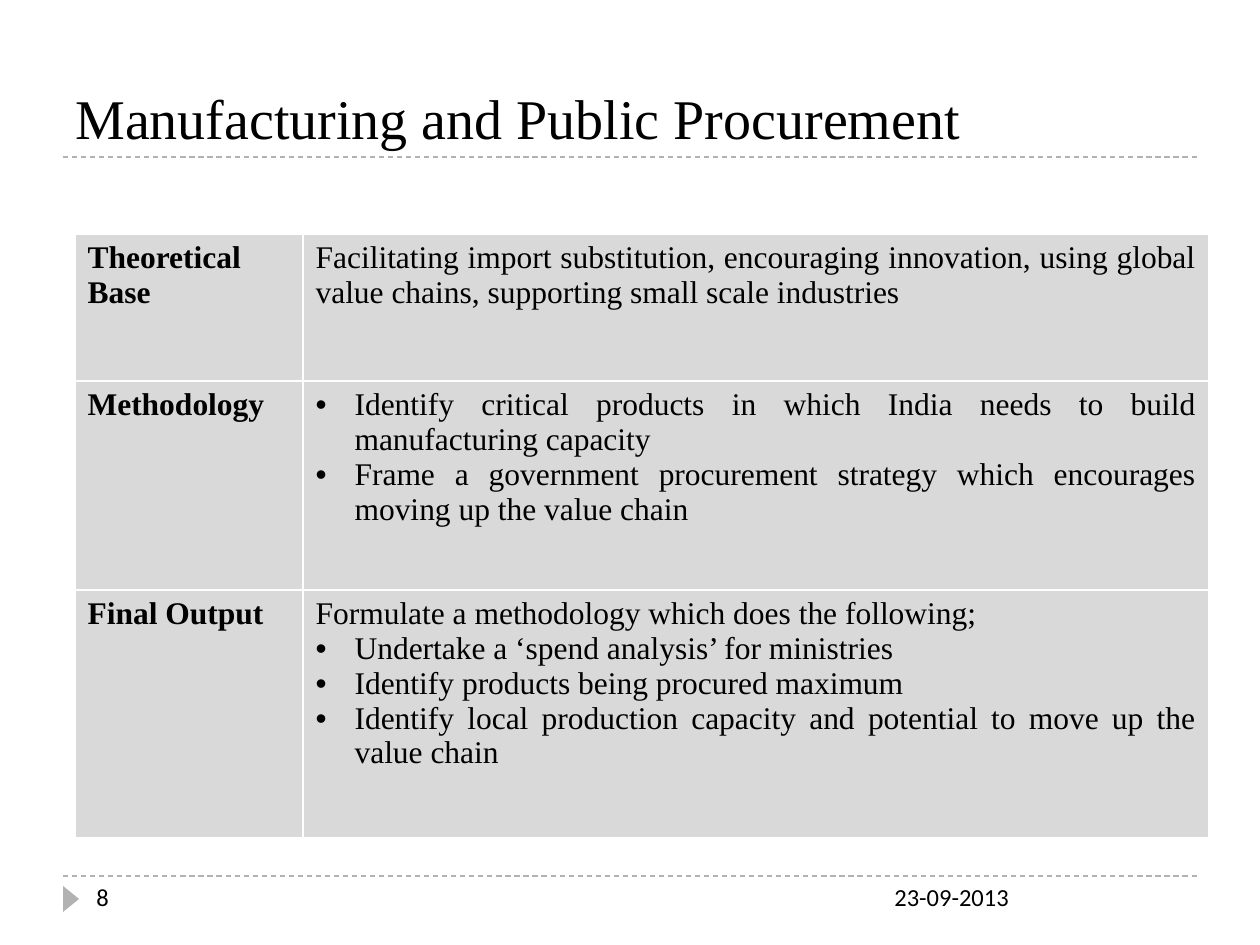
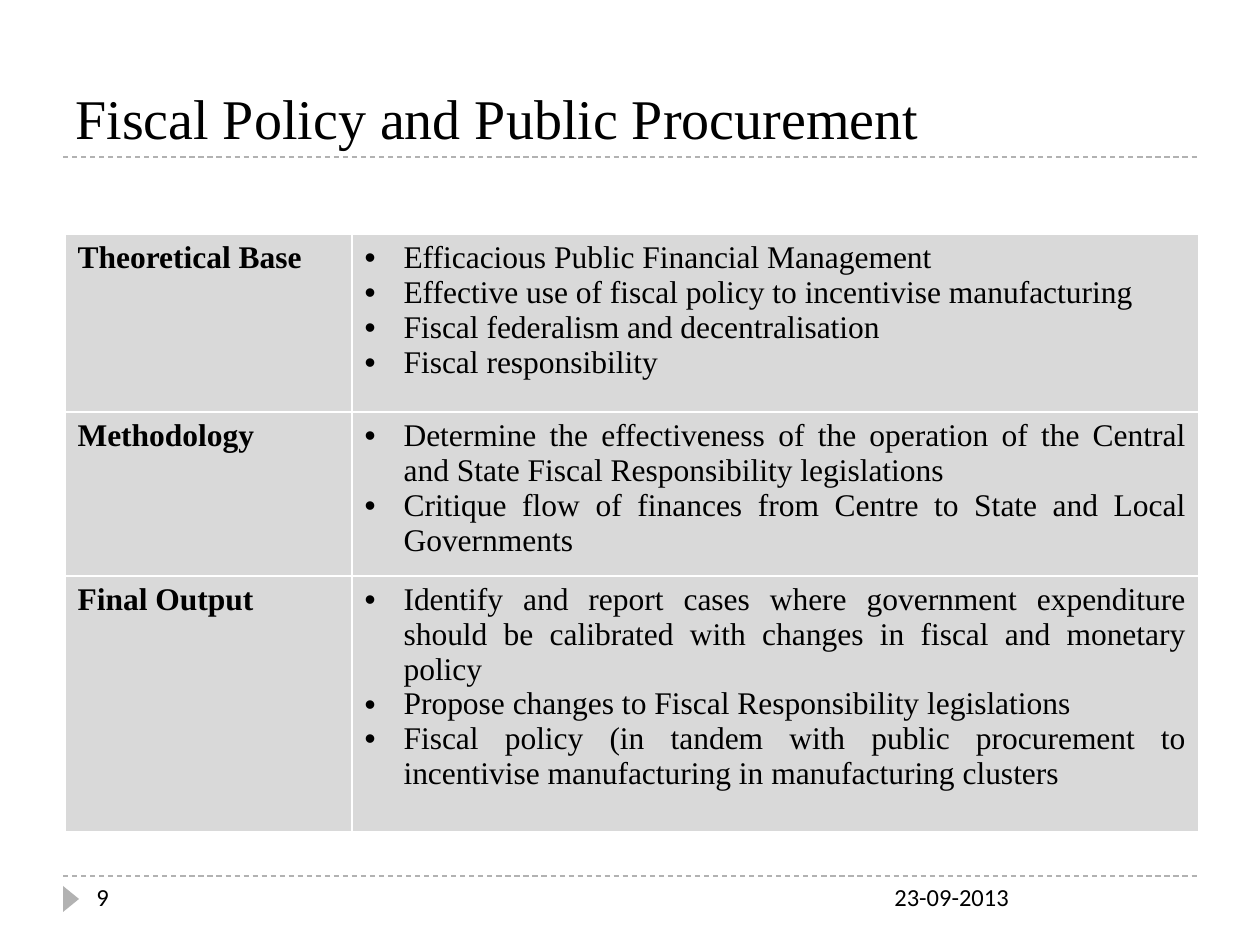
from lxml import etree
from pptx import Presentation
from pptx.dml.color import RGBColor
from pptx.enum.dml import MSO_LINE
from pptx.enum.shapes import MSO_CONNECTOR, MSO_SHAPE
from pptx.enum.text import MSO_ANCHOR, PP_ALIGN
from pptx.oxml.ns import qn
from pptx.util import Emu, Pt

DECK = [
    {
        "title": "Manufacturing and Public Procurement",
        "number": "8",
        "table_left": 75,
        "columns": (228, 906),
        "row_heights": (147, 209, 248),
        "rows": [
            ("Theoretical Base",
             ["Facilitating import substitution, encouraging innovation, using global "
              "value chains, supporting small scale industries"], []),
            ("Methodology", [],
             ["Identify critical products in which India needs to build manufacturing capacity",
              "Frame a government procurement strategy which encourages moving up the value chain"]),
            ("Final Output",
             ["Formulate a methodology which does the following;"],
             ["Undertake a ‘spend analysis’ for ministries",
              "Identify products being procured maximum",
              "Identify local production capacity and potential to move up the value chain"]),
        ],
    },
    {
        "title": "Fiscal Policy and Public Procurement",
        "number": "9",
        "table_left": 65,
        "columns": (287, 847),
        "row_heights": (178, 159, 256),
        "rows": [
            ("Theoretical Base", [],
             ["Efficacious Public Financial Management",
              "Effective use of fiscal policy to incentivise manufacturing",
              "Fiscal federalism and decentralisation",
              "Fiscal responsibility"]),
            ("Methodology", [],
             ["Determine the effectiveness of the operation of the Central and State "
              "Fiscal Responsibility legislations",
              "Critique flow of finances from Centre to State and Local Governments"]),
            ("Final Output", [],
             ["Identify and report cases where government expenditure should be "
              "calibrated with changes in fiscal and monetary policy",
              "Propose changes to Fiscal Responsibility legislations",
              "Fiscal policy (in tandem with public procurement to incentivise "
              "manufacturing in manufacturing clusters"]),
        ],
    },
]
DATE = "23-09-2013"

BLACK = RGBColor(0x00, 0x00, 0x00)
RULE_GRAY = RGBColor(0xB2, 0xB2, 0xB2)
CELL_GRAY = RGBColor(0xD9, 0xD9, 0xD9)
SERIF, SANS = "Times New Roman", "Calibri"
DASH = MSO_LINE.DASH
STRAIGHT = MSO_CONNECTOR.STRAIGHT
TRIANGLE = MSO_SHAPE.ISOSCELES_TRIANGLE
TOP, BOTTOM = MSO_ANCHOR.TOP, MSO_ANCHOR.BOTTOM
LEFT, JUSTIFY = PP_ALIGN.LEFT, PP_ALIGN.JUSTIFY

PIXELS_PER_INCH = 126
SLIDE_WIDTH, SLIDE_HEIGHT = 1260, 945
RULE_LEFT, RULE_RIGHT = 63, 1197
TITLE_RULE, FOOTER_RULE = 157, 876
TITLE_TOP, TABLE_TOP = 21, 234
FOOTER_HEIGHT = 50
BULLET_INDENT = 39


def px(value):
    return Emu(round(value * 914400 / PIXELS_PER_INCH))


def write_text(frame, text, font=SERIF, size=18, bold=False, align=LEFT, bullet=False):
    paragraph = frame.paragraphs[0]
    if paragraph.runs:
        paragraph = frame.add_paragraph()
    paragraph.alignment = align
    run = paragraph.add_run()
    run.text = text
    run.font.name = font
    run.font.size = Pt(size)
    run.font.bold = bold
    run.font.color.rgb = BLACK
    if bullet:
        properties = paragraph._p.get_or_add_pPr()
        properties.set("marL", str(px(BULLET_INDENT)))
        properties.set("indent", str(-px(BULLET_INDENT)))
        etree.SubElement(properties, qn("a:buFont")).set("typeface", "Arial")
        etree.SubElement(properties, qn("a:buChar")).set("char", "•")


def add_text_box(slide, box, text, anchor=TOP, **text_format):
    frame = slide.shapes.add_textbox(*map(px, box)).text_frame
    frame.word_wrap = True
    frame.vertical_anchor = anchor
    write_text(frame, text, **text_format)


def add_rule(slide, y):
    rule = slide.shapes.add_connector(STRAIGHT, px(RULE_LEFT), px(y), px(RULE_RIGHT), px(y))
    rule.line.color.rgb = RULE_GRAY
    rule.line.width = Pt(0.75)
    rule.line.dash_style = DASH
    etree.SubElement(rule._element.spPr, qn("a:effectLst"))


def add_frame(slide, title, number):
    for y in (FOOTER_RULE, TITLE_RULE):
        add_rule(slide, y)
    marker = slide.shapes.add_shape(TRIANGLE, px(58), px(891), px(26), px(16))
    marker.rotation = 90
    marker.shadow.inherit = False
    marker.fill.solid()
    marker.fill.fore_color.rgb = RULE_GRAY
    marker.line.fill.background()
    title_box = (RULE_LEFT, TITLE_TOP, RULE_RIGHT - RULE_LEFT, TITLE_RULE - TITLE_TOP)
    add_text_box(slide, title_box, title, anchor=BOTTOM, size=32)
    for left, width, text in ((882, 315, DATE), (84, 273, number)):
        footer_box = (left, FOOTER_RULE, width, FOOTER_HEIGHT)
        add_text_box(slide, footer_box, text, font=SANS, size=14)


def add_plan_table(slide, left, columns, row_heights, rows):
    table = slide.shapes.add_table(
        len(rows), len(columns), px(left), px(TABLE_TOP),
        px(sum(columns)), px(sum(row_heights))).table
    for column, width in zip(table.columns, columns):
        column.width = px(width)
    for row, height, (heading, statements, bullets) in zip(table.rows, row_heights, rows):
        row.height = px(height)
        for cell in row.cells:
            cell.fill.solid()
            cell.fill.fore_color.rgb = CELL_GRAY
        heading_cell, detail_cell = row.cells
        write_text(heading_cell.text_frame, heading, bold=True, align=JUSTIFY)
        for statement in statements:
            write_text(detail_cell.text_frame, statement, align=JUSTIFY)
        for bullet in bullets:
            write_text(detail_cell.text_frame, bullet, align=JUSTIFY, bullet=True)


def main():
    presentation = Presentation()
    presentation.slide_width = px(SLIDE_WIDTH)
    presentation.slide_height = px(SLIDE_HEIGHT)
    blank_layout = presentation.slide_layouts[6]
    for content in DECK:
        slide = presentation.slides.add_slide(blank_layout)
        add_frame(slide, content["title"], content["number"])
        add_plan_table(slide, content["table_left"], content["columns"],
                       content["row_heights"], content["rows"])
    presentation.save("out.pptx")


if __name__ == "__main__":
    main()
